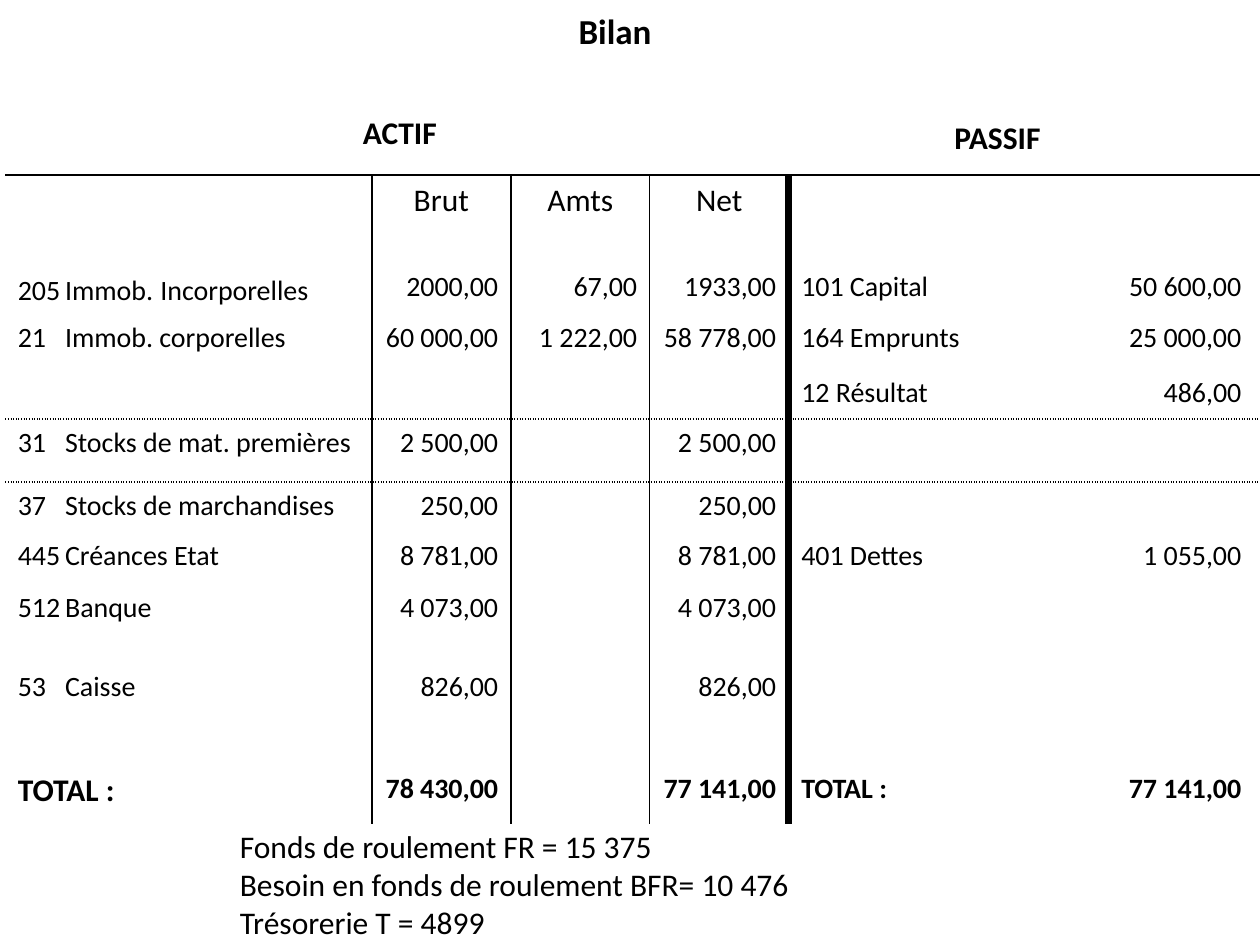
from lxml.etree import SubElement
from pptx import Presentation
from pptx.dml.color import RGBColor
from pptx.enum.text import MSO_ANCHOR, PP_ALIGN
from pptx.oxml.ns import qn
from pptx.util import Pt

FONT = "Calibri"
BLACK = "000000"
LEFT, CENTER, RIGHT = PP_ALIGN.LEFT, PP_ALIGN.CENTER, PP_ALIGN.RIGHT
COLS = [209.5, 79.4, 79.4, 79.4, 269.3]
HEIGHTS = [50.8, 29.1, 30.9, 28.6, 36, 29.1, 29.7, 45.1, 29.1, 29.1, 33.1]
ROWS = [
    ["", "Brut", "Amts", "Net", ""],
    [[("205\tImmob.", 16), (" ", 18), ("Incorporelles", 16)],
     "2000,00", "67,00", "1933,00", "101 Capital\t50 600,00"],
    ["21\tImmob. corporelles", "60 000,00", "1 222,00", "58 778,00",
     "164 Emprunts\t25 000,00"],
    ["", "", "", "", "12 Résultat\t486,00"],
    ["31\tStocks de mat. premières", "2 500,00", "", "2 500,00", ""],
    ["37\tStocks de marchandises", "250,00", "", "250,00", ""],
    ["445\tCréances Etat", "8 781,00", "", "8 781,00", "401 Dettes\t1 055,00"],
    ["512\tBanque", "4 073,00", "", "4 073,00", ""],
    ["53\tCaisse", "826,00", "", "826,00", ""],
    ["", "", "", "", ""],
    [[("TOTAL :", 18)], "78 430,00", "", "77 141,00", "TOTAL :\t77 141,00"],
]
V_LINES = {1: (1, "solid"), 2: (1, "solid"), 3: (1, "solid"), 4: (4.5, "solid")}
H_LINES = {0: (1, "solid"), 4: (1, "sysDot"), 5: (1, "sysDot")}


def rgb(color):
    return RGBColor.from_string(color)


def add_run(p, text, size=18, bold=False, color=BLACK):
    r = p.add_run()
    r.text = text
    r.font.name = FONT
    r.font.size = Pt(size)
    r.font.bold = bold
    r.font.color.rgb = rgb(color)


def write_lines(tf, lines, align=LEFT, **fmt):
    tf.word_wrap = True
    tf.vertical_anchor = MSO_ANCHOR.TOP
    for i, line in enumerate(lines):
        p = tf.add_paragraph() if i else tf.paragraphs[0]
        p.alignment = align
        add_run(p, line, **fmt)


def place(sp, x, y, w, h):
    sp.left, sp.top, sp.width, sp.height = Pt(x), Pt(y), Pt(w), Pt(h)


def add_text(s, box, lines, **fmt):
    sp = s.shapes.add_textbox(*[Pt(v) for v in box])
    write_lines(sp.text_frame, lines, **fmt)


def add_tab(p, pos, align):
    tabs = SubElement(p._p.get_or_add_pPr(), qn("a:tabLst"))
    SubElement(tabs, qn("a:tab"), pos=str(Pt(pos)), algn=align)


def set_border(cell, side, line):
    tcPr = cell._tc.get_or_add_tcPr()
    if line is None:
        SubElement(SubElement(tcPr, qn("a:" + side), w="0"), qn("a:noFill"))
        return
    width, dash = line
    ln = SubElement(tcPr, qn("a:" + side), w=str(Pt(width)))
    SubElement(SubElement(ln, qn("a:solidFill")), qn("a:srgbClr"), val=BLACK)
    SubElement(ln, qn("a:prstDash"), val=dash)


def fill_cell(cell, content, row, col):
    p = cell.text_frame.paragraphs[0]
    size = 18 if row == 0 else 16
    if not content:
        SubElement(p._p, qn("a:endParaRPr"), sz=str(size * 100))
    else:
        p.alignment = CENTER if row == 0 else RIGHT if 0 < col < 4 else LEFT
        if col == 0:
            add_tab(p, 27, "l")
        elif col == 4:
            add_tab(p, 251.5, "r")
        runs = [(content, size)] if isinstance(content, str) else content
        for text, run_size in runs:
            add_run(p, text, size=run_size, bold=row == len(ROWS) - 1)
    for side, line in (("lnL", V_LINES.get(col)), ("lnR", V_LINES.get(col + 1)),
                       ("lnT", H_LINES.get(row)), ("lnB", H_LINES.get(row + 1))):
        set_border(cell, side, line)
    cell.fill.background()


def add_balance(s, x, y):
    table = s.shapes.add_table(len(ROWS), len(COLS), Pt(x), Pt(y),
                               Pt(sum(COLS)), Pt(sum(HEIGHTS))).table
    table.first_row = table.horz_banding = False
    for column, width in zip(table.columns, COLS):
        column.width = Pt(width)
    for i, (height, row) in enumerate(zip(HEIGHTS, ROWS)):
        table.rows[i].height = Pt(height)
        for j, content in enumerate(row):
            fill_cell(table.cell(i, j), content, i, j)


def main():
    prs = Presentation()
    prs.slide_width, prs.slide_height = Pt(720), Pt(540)
    s = prs.slides.add_slide(prs.slide_layouts[5])
    place(s.shapes.title, 54, 2, 595, 55)
    write_lines(s.shapes.title.text_frame, ["Bilan"], align=CENTER, size=20, bold=True)
    add_balance(s, 3, 100)
    add_text(s, (155, 61, 147, 29), ["ACTIF"], align=CENTER, bold=True)
    add_text(s, (482, 64, 176, 29), ["PASSIF"], align=CENTER, bold=True)
    add_text(s, (130, 469, 346, 73), [
        "Fonds de roulement FR = 15 375",
        "Besoin en fonds de roulement BFR= 10 476",
        "Trésorerie T = 4899",
    ])
    prs.save("out.pptx")


if __name__ == "__main__":
    main()
